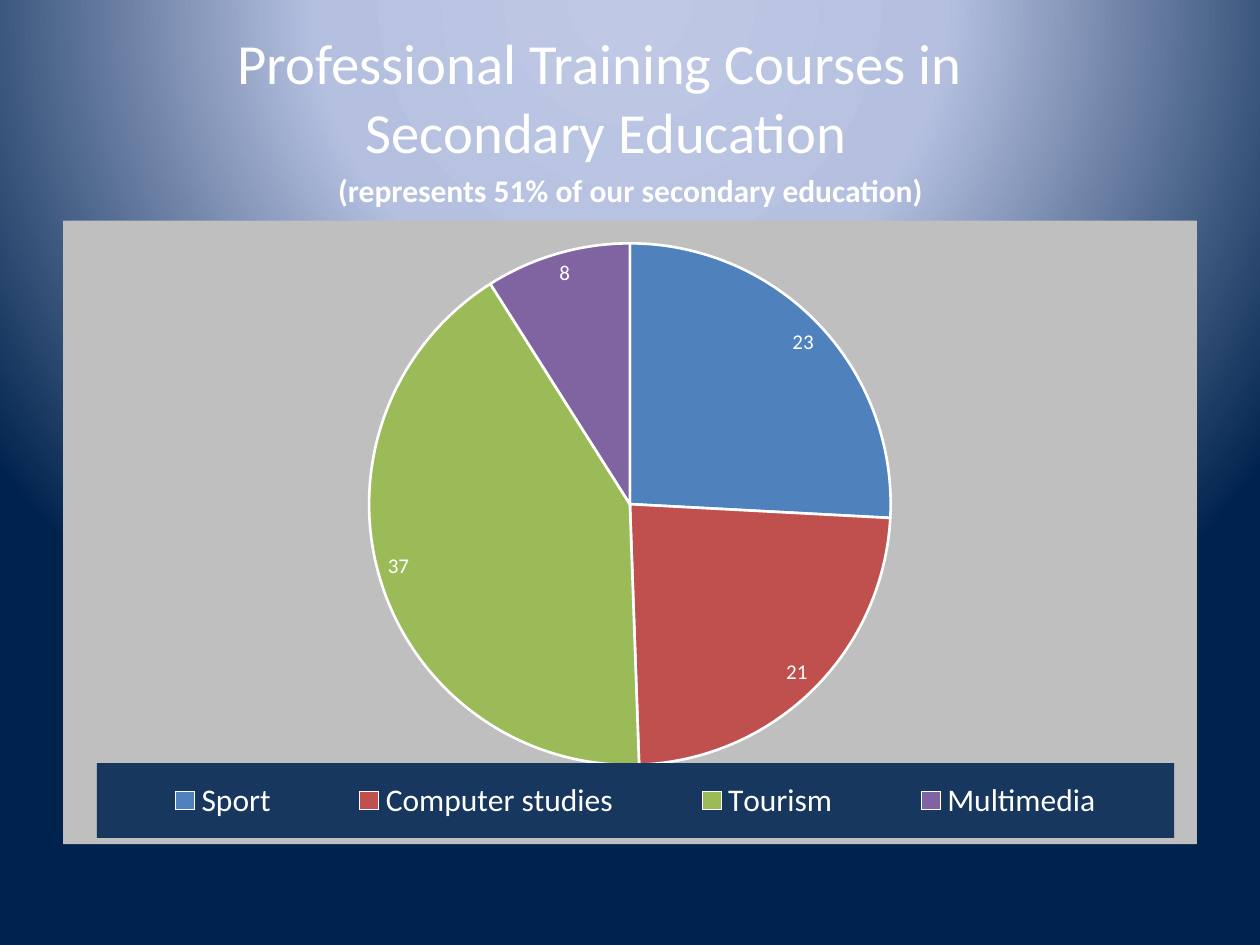
"""Builds a slide with a pie chart of professional training courses."""
from pptx import Presentation
from pptx.chart.data import CategoryChartData
from pptx.dml.color import RGBColor
from pptx.enum.chart import XL_CHART_TYPE, XL_LABEL_POSITION, XL_LEGEND_POSITION
from pptx.enum.text import MSO_ANCHOR, PP_ALIGN
from pptx.oxml import parse_xml
from pptx.oxml.ns import nsdecls, qn
from pptx.util import Pt

PIE = XL_CHART_TYPE.PIE
INSIDE_END = XL_LABEL_POSITION.INSIDE_END
BOTTOM = XL_LEGEND_POSITION.BOTTOM
CENTER = PP_ALIGN.CENTER
MIDDLE = MSO_ANCHOR.MIDDLE
TOP = MSO_ANCHOR.TOP

FONT = "Calibri"
COLORS = {
    "text": "FFFFFF",
    "chart": "BFBFBF",
    "legend": "17375E",
    "glow": "BFC9E5",
    "haze": "B5C0E0",
    "night": "00234D",
}
COURSES = [
    ("Sport", 23, "4F81BD"),
    ("Computer studies", 21, "C0504D"),
    ("Tourism", 37, "9BBB59"),
    ("Multimedia", 8, "8064A2"),
]


def set_font(font, size, bold=False):
    """Give a font the slide's typeface and text colour."""
    font.name = FONT
    font.size = Pt(size)
    font.bold = bold
    font.color.rgb = RGBColor.from_string(COLORS["text"])


def set_background(slide):
    """Fill the background with a radial gradient centred above the slide."""
    slide.background.fill.gradient()
    gradient = slide.element.find(".//" + qn("a:gradFill"))
    stops = "".join(
        f'<a:gs pos="{position * 1000}"><a:srgbClr val="{COLORS[name]}"/></a:gs>'
        for position, name in [(0, "glow"), (40, "haze"), (100, "night")]
    )
    radial = parse_xml(
        f'<a:gradFill {nsdecls("a")} rotWithShape="1"><a:gsLst>{stops}</a:gsLst>'
        '<a:path path="circle"><a:fillToRect l="50000" t="-80000" r="50000" '
        'b="180000"/></a:path></a:gradFill>'
    )
    gradient.getparent().replace(gradient, radial)


def add_text(slide, text, left, top, width, height, *, size, bold=False, anchor=TOP):
    """Add a centred, wrapping text box."""
    box = slide.shapes.add_textbox(Pt(left), Pt(top), Pt(width), Pt(height))
    frame = box.text_frame
    frame.word_wrap = True
    frame.vertical_anchor = anchor
    paragraph = frame.paragraphs[0]
    paragraph.text = text
    paragraph.alignment = CENTER
    for run in paragraph.runs:
        set_font(run.font, size, bold)


def solid_properties(color):
    """Return chart shape properties with a solid fill and no line."""
    return parse_xml(
        f'<c:spPr {nsdecls("c", "a")}><a:solidFill><a:srgbClr val="{color}"/>'
        "</a:solidFill><a:ln><a:noFill/></a:ln></c:spPr>"
    )


def set_layout(element, index, target, x, y, width, height):
    """Place a chart part by fractions of the chart area."""
    for old in element.findall(qn("c:layout")):
        element.remove(old)
    inner = f'<c:layoutTarget val="{target}"/>' if target else ""
    sizes = "".join(
        f'<c:{tag} val="{value}"/>'
        for tag, value in [("x", x), ("y", y), ("w", width), ("h", height)]
    )
    element.insert(index, parse_xml(
        f'<c:layout {nsdecls("c")}><c:manualLayout>{inner}<c:xMode val="edge"/>'
        f'<c:yMode val="edge"/>{sizes}</c:manualLayout></c:layout>'
    ))


def format_legend(chart):
    """Show the legend as a dark band along the bottom."""
    chart.has_legend = True
    legend = chart.legend
    legend.position = BOTTOM
    legend.include_in_layout = False
    set_font(legend.font, 18)
    element = legend.font and chart.element.find(".//" + qn("c:legend"))
    set_layout(element, 1, None, 0.03, 0.87, 0.95, 0.12)
    element.find(qn("c:overlay")).addnext(solid_properties(COLORS["legend"]))


def add_pie(slide, left, top, width, height):
    """Add the pie chart with one coloured slice per course."""
    data = CategoryChartData()
    data.categories = [name for name, _, _ in COURSES]
    data.add_series("Series 1", [value for _, value, _ in COURSES])
    chart = slide.shapes.add_chart(
        PIE, Pt(left), Pt(top), Pt(width), Pt(height), data
    ).chart
    chart.has_title = False
    set_font(chart.font, 10)
    chart.element.find(qn("c:chart")).addnext(solid_properties(COLORS["chart"]))
    plot = chart.plots[0]
    plot.vary_by_categories = True
    series = plot.series[0]
    for index, (_, _, color) in enumerate(COURSES):
        slice_format = series.points[index].format
        slice_format.fill.solid()
        slice_format.fill.fore_color.rgb = RGBColor.from_string(color)
        slice_format.line.color.rgb = RGBColor.from_string(COLORS["text"])
        slice_format.line.width = Pt(1.5)
    labels = series.data_labels
    labels.show_value = True
    labels.position = INSIDE_END
    set_font(labels.font, 12)
    set_layout(chart.element.find(".//" + qn("c:plotArea")), 0, "inner",
               0.27, 0.03, 0.46, 0.85)
    format_legend(chart)


def main():
    """Build and save the slide."""
    presentation = Presentation()
    presentation.slide_width = Pt(720)
    presentation.slide_height = Pt(540)
    slide = presentation.slides.add_slide(presentation.slide_layouts[6])
    set_background(slide)
    add_text(slide, "Professional Training Courses in \vSecondary Education",
             8.64, 21.6, 675.36, 66.96, size=32.4, anchor=MIDDLE)
    add_pie(slide, 36, 126, 648, 356.4)
    add_text(slide, "(represents 51% of our secondary education)",
             59.76, 94.32, 601.2, 28.8, size=18, bold=True)
    presentation.save("out.pptx")


if __name__ == "__main__":
    main()
